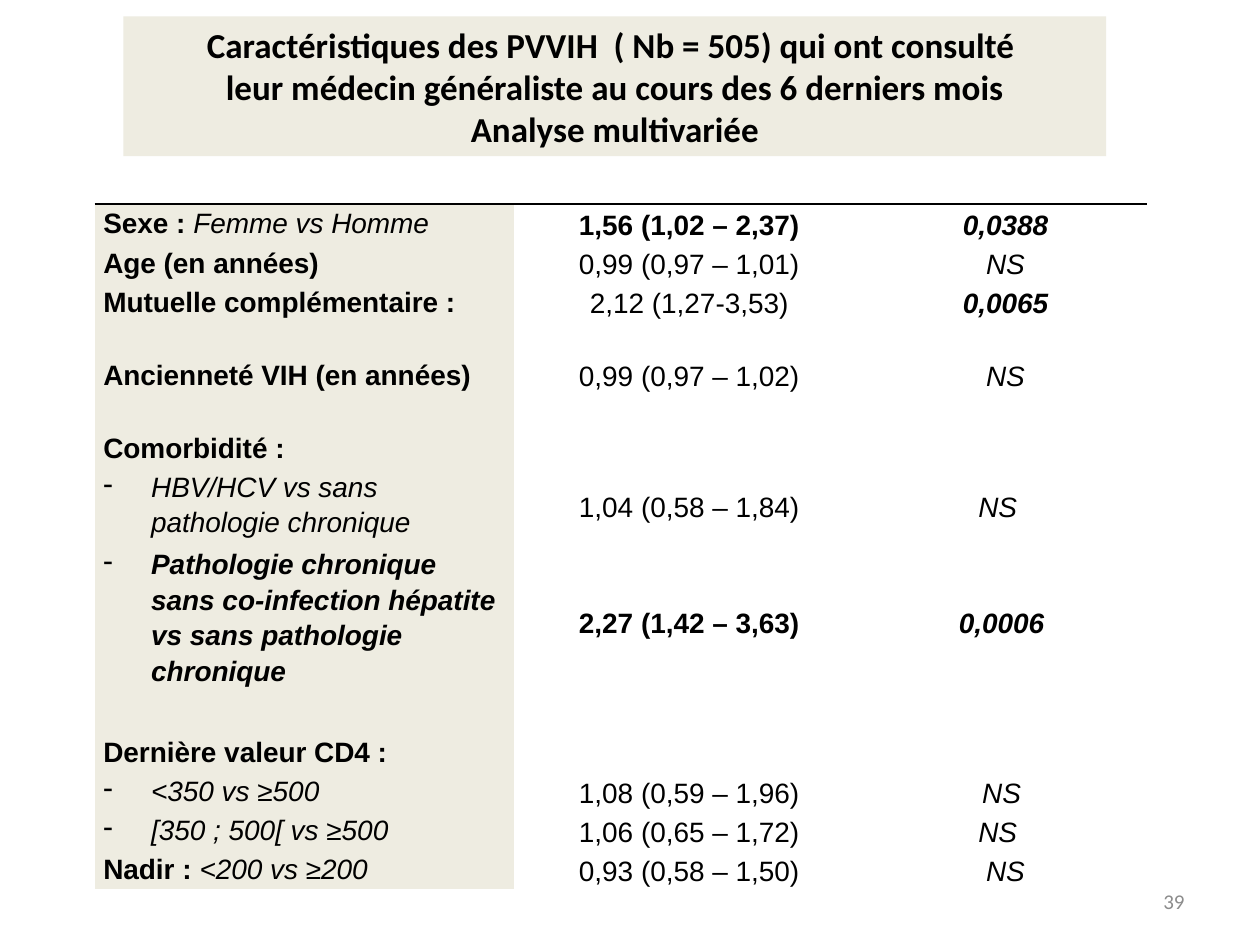
import dataclasses
import pptx
import pptx.dml.color
import pptx.enum.text
import pptx.oxml
import pptx.oxml.ns
import pptx.util

Inches = pptx.util.Inches
Pt = pptx.util.Pt
Align = pptx.enum.text.PP_ALIGN
Anchor = pptx.enum.text.MSO_ANCHOR
Fit = pptx.enum.text.MSO_AUTO_SIZE


@dataclasses.dataclass(frozen=True)
class Theme:
    ink: str = "000000"
    sand: str = "EEECE1"
    page: str = "FFFFFF"
    grey: str = "8C8C8C"
    head: str = "Calibri"
    body: str = "Arial"
    big: int = 20
    mid: int = 16
    low: int = 12


THEME = Theme()
HEAD = [
    "Caractéristiques des PVVIH  ( Nb = 505) qui ont consulté ",
    "leur médecin généraliste au cours des 6 derniers mois",
    "Analyse multivariée",
]
COLS = [3.33, 2.78, 2.24]
TALL = {0: 0.27, 1: 0.31, 2: 0.61, 4: 1.22}
GAP = (0, False, [], [], [])

# lines, bullet, label, odds ratio, p value; each run is (text, style)
ROWS = [
    (1, False, [("Sexe : ", "b"), ("Femme vs Homme", "i")],
     [("1,56 (1,02 – 2,37)", "b")], [("0,0388", "bi")]),
    (1, False, [("Age (en années)", "b")],
     [("0,99 (0,97 – 1,01)", "")], [("NS", "i")]),
    (1, False, [("Mutuelle complémentaire :", "b")],
     [("2,12 (1,27-3,53)", "")], [("0,0065", "bi")]),
    GAP,
    (1, False, [("Ancienneté VIH (en années)", "b")],
     [("0,99 (0,97 – 1,02)", "")], [("NS", "i")]),
    GAP,
    (1, False, [("Comorbidité :", "b")], [], []),
    (2, True, [("HBV/HCV vs sans pathologie chronique", "i")],
     [("1,04 (0,58 – 1,84)", "")], [("NS  ", "i")]),
    (4, True, [("Pathologie chronique sans co-infection hépatite "
                "vs sans pathologie chronique", "bi")],
     [("2,27 (1,42 – 3,63)", "b")], [("0,0006 ", "bi")]),
    GAP,
    (1, False, [("Dernière valeur CD4 :", "b")], [], []),
    (1, True, [("<350 vs ≥500", "i")],
     [("1,08 (0,59 – 1,96)", "")], [("NS ", "i")]),
    (1, True, [("[350 ; 500[ vs ≥500", "i")],
     [("1,06 (0,65 – 1,72)", "")], [("NS  ", "i")]),
    (1, False, [("Nadir : ", "b"), ("<200 vs ≥200", "i")],
     [("0,93 (0,58 – 1,50)", "")], [("NS", "i")]),
]


def put(item, form):
    for key, val in form.items():
        setattr(item, key, val)


def paint(fill, tone):
    fill.solid()
    fill.fore_color.rgb = pptx.dml.color.RGBColor.from_string(tone)


def write(para, text, face, size, tone, style=""):
    run = para.add_run()
    run.text = text
    put(run.font, {"name": face, "size": Pt(size),
                   "bold": "b" in style, "italic": "i" in style})
    run.font.color.rgb = pptx.dml.color.RGBColor.from_string(tone)


def node(tag, inner="", **attrs):
    space = pptx.oxml.ns.nsdecls("a")
    pairs = " ".join(f'{key}="{val}"' for key, val in attrs.items())
    return pptx.oxml.parse_xml(f"<a:{tag} {space} {pairs}>{inner}</a:{tag}>")


def place(shape, box):
    put(shape, dict(zip(("left", "top", "width", "height"), box)))


def add_head(slide, box):
    shape = slide.shapes.title
    place(shape, box)
    paint(shape.fill, THEME.sand)
    frame = shape.text_frame
    put(frame, {"word_wrap": True, "auto_size": Fit.NONE,
                "vertical_anchor": Anchor.MIDDLE})
    for num, line in enumerate(HEAD):
        para = frame.add_paragraph() if num else frame.paragraphs[0]
        para.alignment = Align.CENTER
        write(para, line, THEME.head, THEME.big, THEME.ink, "b")


def fill_cell(cell, runs, first, dash):
    put(cell, {"margin_left": Inches(0.07), "margin_right": Inches(0.07),
               "margin_top": 0, "margin_bottom": 0,
               "vertical_anchor": Anchor.TOP if first else Anchor.MIDDLE})
    paint(cell.fill, THEME.sand if first else THEME.page)
    para = cell.text_frame.paragraphs[0]
    if not runs:
        para._p.append(node("endParaRPr", sz=THEME.mid * 100))
        return
    put(para, {"line_spacing": 1.15,
               "alignment": Align.LEFT if first else Align.CENTER})
    for text, style in runs:
        write(para, text, THEME.body, THEME.mid, THEME.ink, style)
    if first and dash:
        props = para._p.get_or_add_pPr()
        props.set("marL", str(Inches(0.38)))
        props.set("indent", str(Inches(-0.38)))
        props.append(node("buChar", char="-"))


def add_grid(slide, box):
    shape = slide.shapes.add_table(len(ROWS), len(COLS), *box)
    table = shape.table
    put(table, {"first_row": False, "horz_banding": False})
    style = table._tbl.tblPr.find(pptx.oxml.ns.qn("a:tableStyleId"))
    style.text = "{2D5ABB26-0587-4C30-8999-92F81FD0307C}"
    for col, wide in zip(table.columns, COLS):
        col.width = Inches(wide)
    for num, (lines, dash, *cells) in enumerate(ROWS):
        table.rows[num].height = Inches(TALL[lines])
        for pos, runs in enumerate(cells):
            fill_cell(table.cell(num, pos), runs, pos == 0, dash)
    ink = f'<a:solidFill><a:srgbClr val="{THEME.ink}"/></a:solidFill>'
    for cell in table.rows[0].cells:
        cell._tc.get_or_add_tcPr().insert(0, node("lnT", ink, w=Pt(1)))


def add_page(slide, box):
    frame = slide.shapes.add_textbox(*box).text_frame
    put(frame, {"word_wrap": True, "vertical_anchor": Anchor.MIDDLE})
    para = frame.paragraphs[0]
    para.alignment = Align.RIGHT
    write(para, "39", THEME.head, THEME.low, THEME.grey)


def main():
    deck = pptx.Presentation()
    put(deck, {"slide_width": Inches(10), "slide_height": Inches(7.5)})
    slide = deck.slides.add_slide(deck.slide_layouts[5])
    add_page(slide, [Inches(n) for n in (7.17, 6.95, 2.33, 0.4)])
    add_head(slide, [Inches(n) for n in (0.98, 0.13, 7.8, 1.11)])
    tall = sum(TALL[row[0]] for row in ROWS)
    add_grid(slide, [Inches(n) for n in (0.75, 1.62, sum(COLS), tall)])
    deck.save("out.pptx")


if __name__ == "__main__":
    main()
